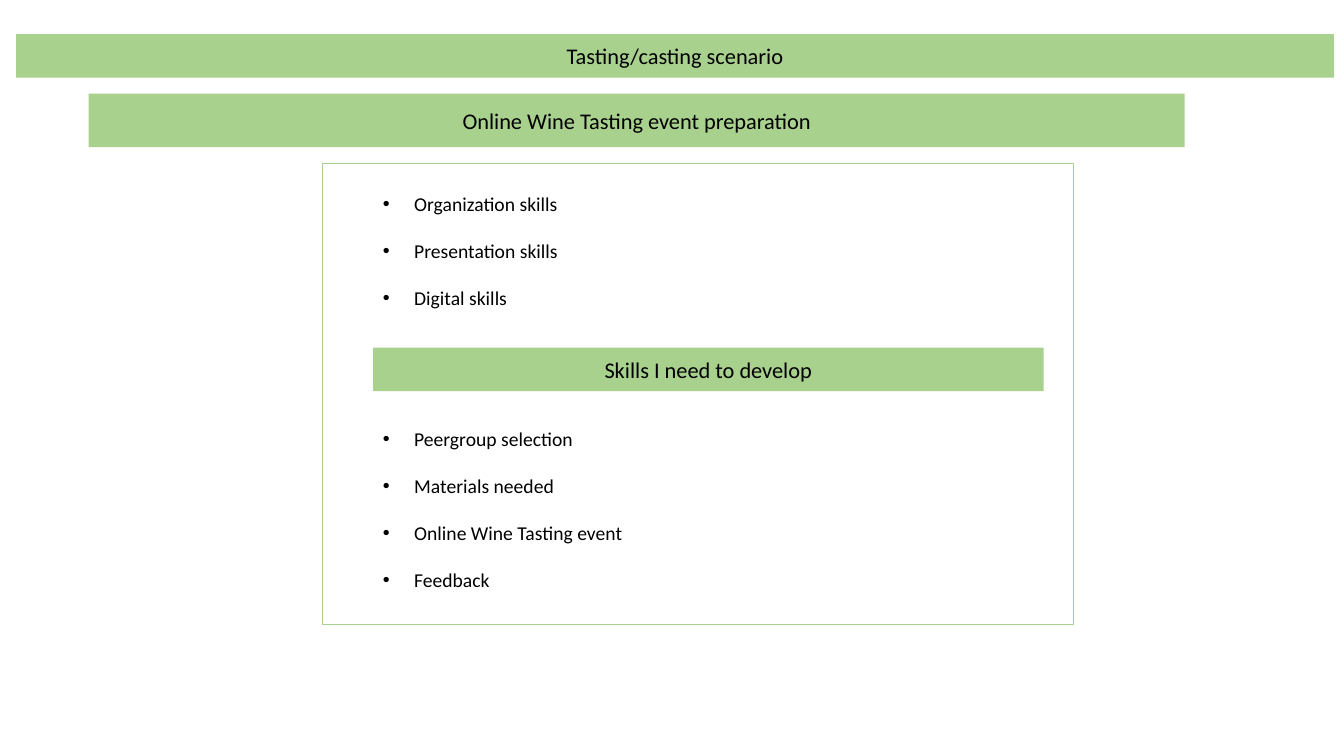
from lxml.etree import SubElement
from pptx import Presentation
from pptx.dml.color import RGBColor
from pptx.enum.shapes import MSO_SHAPE
from pptx.enum.text import MSO_ANCHOR, PP_ALIGN
from pptx.oxml.ns import qn
from pptx.util import Inches, Pt

COLORS = {"green": "A9D18E", "text": "000000"}
LINE_GAP = 16.8
SKILLS = ["Organization skills", "Presentation skills", "Digital skills"]
STEPS = ["Peergroup selection", "Materials needed", "Online Wine Tasting event", "Feedback"]
BARS = [
    ("Tasting/casting scenario", (1.2, 4.53, 98.05, 5.73)),
    ("Online Wine Tasting event preparation", (6.6, 12.4, 81.55, 7.07)),
    ("Skills I need to develop", (27.76, 46, 49.89, 5.73)),
]


def apply_format(target, values):
    for name, value in values.items():
        setattr(target, name, value)


class SlideBuilder:
    """Hold the style and the current slide; lengths are percent of its size."""

    def __init__(self, presentation):
        self.width = presentation.slide_width
        self.height = presentation.slide_height
        self.slide = presentation.slides.add_slide(presentation.slide_layouts[6])
        self.font = "Calibri"

    def color(self, name):
        return RGBColor.from_string(COLORS[name])

    def rectangle(self, area):
        sizes = (self.width, self.height) * 2
        bounds = [round(share * size / 100) for share, size in zip(area, sizes)]
        shape = self.slide.shapes.add_shape(MSO_SHAPE.RECTANGLE, *bounds)
        shape.shadow.inherit = False
        shape.text_frame.word_wrap = True
        return shape

    def add_text(self, paragraph, text, size, values):
        apply_format(paragraph, values)
        run = paragraph.add_run()
        run.text = text
        apply_format(run.font, {"name": self.font, "size": Pt(size)})
        run.font.color.rgb = self.color("text")

    def bar(self, text, area):
        shape = self.rectangle(area)
        shape.fill.solid()
        shape.fill.fore_color.rgb = self.color("green")
        shape.line.fill.background()
        shape.text_frame.vertical_anchor = MSO_ANCHOR.MIDDLE
        self.add_text(shape.text_frame.paragraphs[0], text, 16, {"alignment": PP_ALIGN.CENTER})

    def bullet_box(self, groups, group_gap, area):
        shape = self.rectangle(area)
        shape.fill.background()
        shape.line.color.rgb = self.color("green")
        shape.line.width = Pt(0.75)
        frame = shape.text_frame
        apply_format(frame, {"vertical_anchor": MSO_ANCHOR.TOP, "margin_top": Inches(0.28)})
        paragraph = frame.paragraphs[0]
        for group in groups:
            for text in group:
                if paragraph.runs:
                    paragraph = frame.add_paragraph()
                gap = group_gap if text == group[-1] and group is not groups[-1] else LINE_GAP
                values = {"alignment": PP_ALIGN.LEFT, "level": 1, "space_after": Pt(gap)}
                self.add_text(paragraph, text, 14, values)
                self.bullet(paragraph)

    def bullet(self, paragraph):
        properties = paragraph._p.get_or_add_pPr()
        properties.set("marL", str(Inches(0.81)))
        properties.set("indent", str(Inches(-0.31)))
        color = SubElement(properties, qn("a:buClr"))
        SubElement(color, qn("a:srgbClr"), val=COLORS["text"])
        SubElement(properties, qn("a:buFont"), typeface="Arial")
        SubElement(properties, qn("a:buChar"), char="•")


def main():
    presentation = Presentation()
    apply_format(presentation, {"slide_width": Inches(13.33), "slide_height": Inches(7.5)})
    builder = SlideBuilder(presentation)
    for text, area in BARS:
        builder.bar(text, area)
    builder.bullet_box([SKILLS, STEPS], 5 * LINE_GAP, (24, 21.6, 55.89, 61.07))
    presentation.save("out.pptx")


if __name__ == "__main__":
    main()
